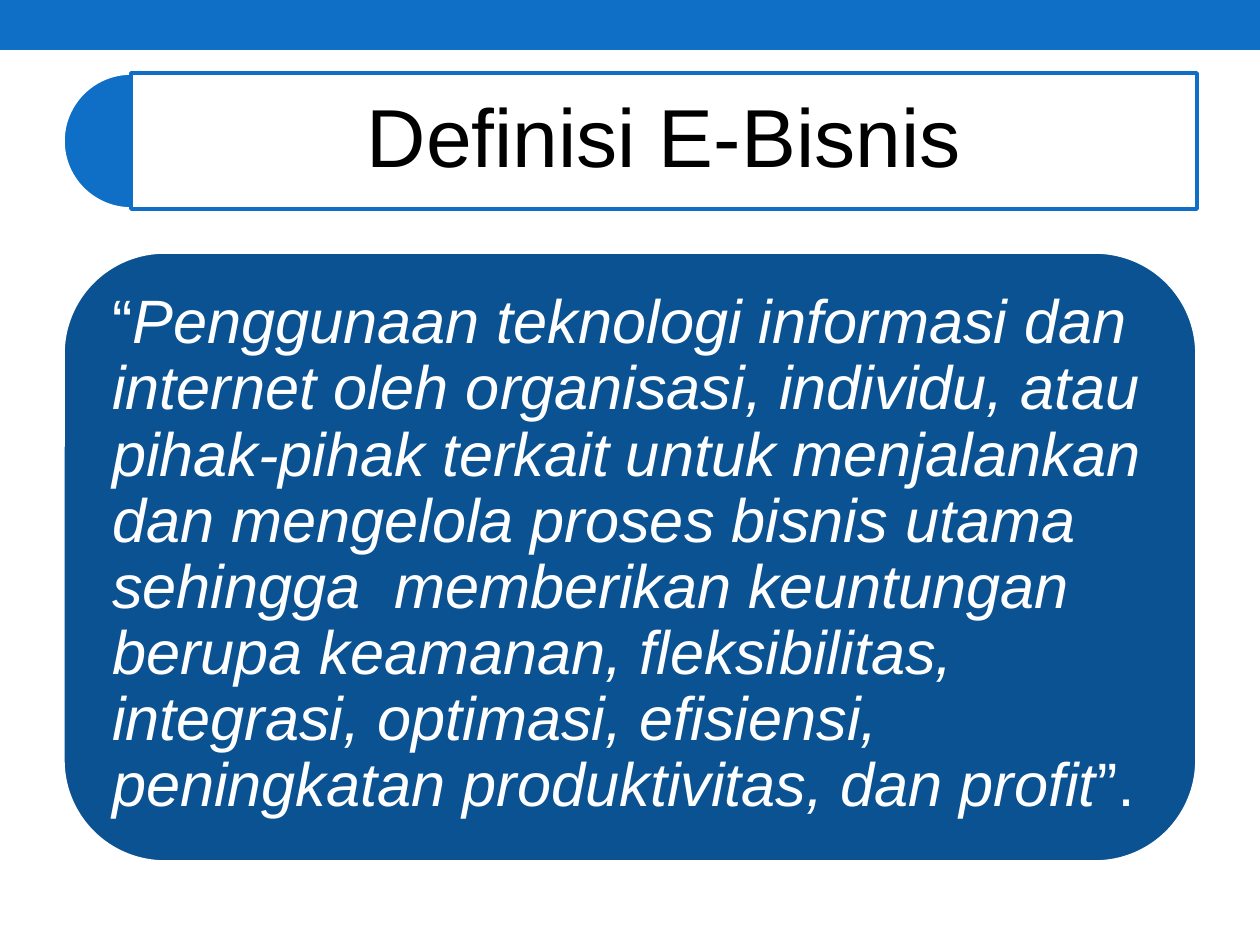
from dataclasses import dataclass
from typing import Optional

from lxml.etree import SubElement
from pptx import Presentation
from pptx.dml.color import RGBColor
from pptx.enum.shapes import MSO_SHAPE
from pptx.enum.text import MSO_ANCHOR, PP_ALIGN
from pptx.oxml.ns import qn
from pptx.util import Emu, Pt

PX = 914400 / 126
BLUE = RGBColor(0x0F, 0x6F, 0xC6)
NAVY = RGBColor(0x0B, 0x52, 0x92)
WHITE = RGBColor(0xFF, 0xFF, 0xFF)
BLACK = RGBColor(0, 0, 0)


@dataclass
class Box:
    left: int
    top: int
    width: int
    height: int

    def emu(self) -> list[Emu]:
        return [px(n) for n in (self.left, self.top, self.width, self.height)]


@dataclass
class Panel:
    kind: MSO_SHAPE
    box: Box
    fill: RGBColor
    line: Optional[RGBColor] = None
    adjustments: tuple[float, ...] = ()
    opacity: int = 100


@dataclass
class Text:
    box: Box
    runs: list[tuple[str, bool]]
    size: int
    color: RGBColor
    align: PP_ALIGN
    inset: int


PANELS = [
    Panel(MSO_SHAPE.RECTANGLE, Box(0, 0, 1260, 50), BLUE),
    Panel(MSO_SHAPE.PIE, Box(63, 73, 136, 136), BLUE, WHITE, (54, 162)),
    Panel(MSO_SHAPE.RECTANGLE, Box(131, 73, 1066, 136), WHITE, BLUE, opacity=90),
    Panel(MSO_SHAPE.ROUNDED_RECTANGLE, Box(63, 252, 1134, 610), NAVY, WHITE),
]

DEFINITION = (
    "Penggunaan teknologi informasi dan internet oleh organisasi, individu, "
    "atau pihak-pihak terkait untuk menjalankan dan mengelola proses bisnis "
    "utama sehingga  memberikan keuntungan berupa keamanan, fleksibilitas, "
    "integrasi, optimasi, efisiensi,  peningkatan produktivitas, dan profit"
)

TEXTS = [
    Text(Box(131, 73, 1066, 136), [("Definisi E-Bisnis", False)],
         47, BLACK, PP_ALIGN.CENTER, 25),
    Text(Box(93, 281, 1075, 549),
         [("“", False), (DEFINITION, True), ("”.", False)],
         35, WHITE, PP_ALIGN.LEFT, 19),
]


def px(n: int) -> Emu:
    return Emu(round(n * PX))


def draw_panel(s, panel: Panel) -> None:
    sp = s.shapes.add_shape(panel.kind, *panel.box.emu())
    sp.shadow.inherit = False
    for i, value in enumerate(panel.adjustments):
        sp.adjustments[i] = value
    sp.fill.solid()
    sp.fill.fore_color.rgb = panel.fill
    if panel.opacity < 100:
        clr = sp._element.spPr.find(qn("a:solidFill")).find(qn("a:srgbClr"))
        SubElement(clr, qn("a:alpha")).set("val", str(panel.opacity * 1000))
    if panel.line is None:
        sp.line.fill.background()
    else:
        sp.line.color.rgb = panel.line
        sp.line.width = Pt(2.08)


def draw_text(s, text: Text) -> None:
    tf = s.shapes.add_textbox(*text.box.emu()).text_frame
    tf.word_wrap = True
    tf.vertical_anchor = MSO_ANCHOR.MIDDLE
    tf.margin_left = tf.margin_right = px(text.inset)
    tf.margin_top = tf.margin_bottom = px(text.inset)
    p = tf.paragraphs[0]
    p.alignment = text.align
    p.line_spacing = 0.9
    for words, italic in text.runs:
        r = p.add_run()
        r.text = words
        r.font.name = "Arial"
        r.font.size = Pt(text.size)
        r.font.italic = italic
        r.font.color.rgb = text.color


def main() -> None:
    prs = Presentation()
    prs.slide_width, prs.slide_height = px(1260), px(945)
    s = prs.slides.add_slide(prs.slide_layouts[6])
    for panel in PANELS:
        draw_panel(s, panel)
    for text in TEXTS:
        draw_text(s, text)
    prs.save("out.pptx")


if __name__ == "__main__":
    main()
